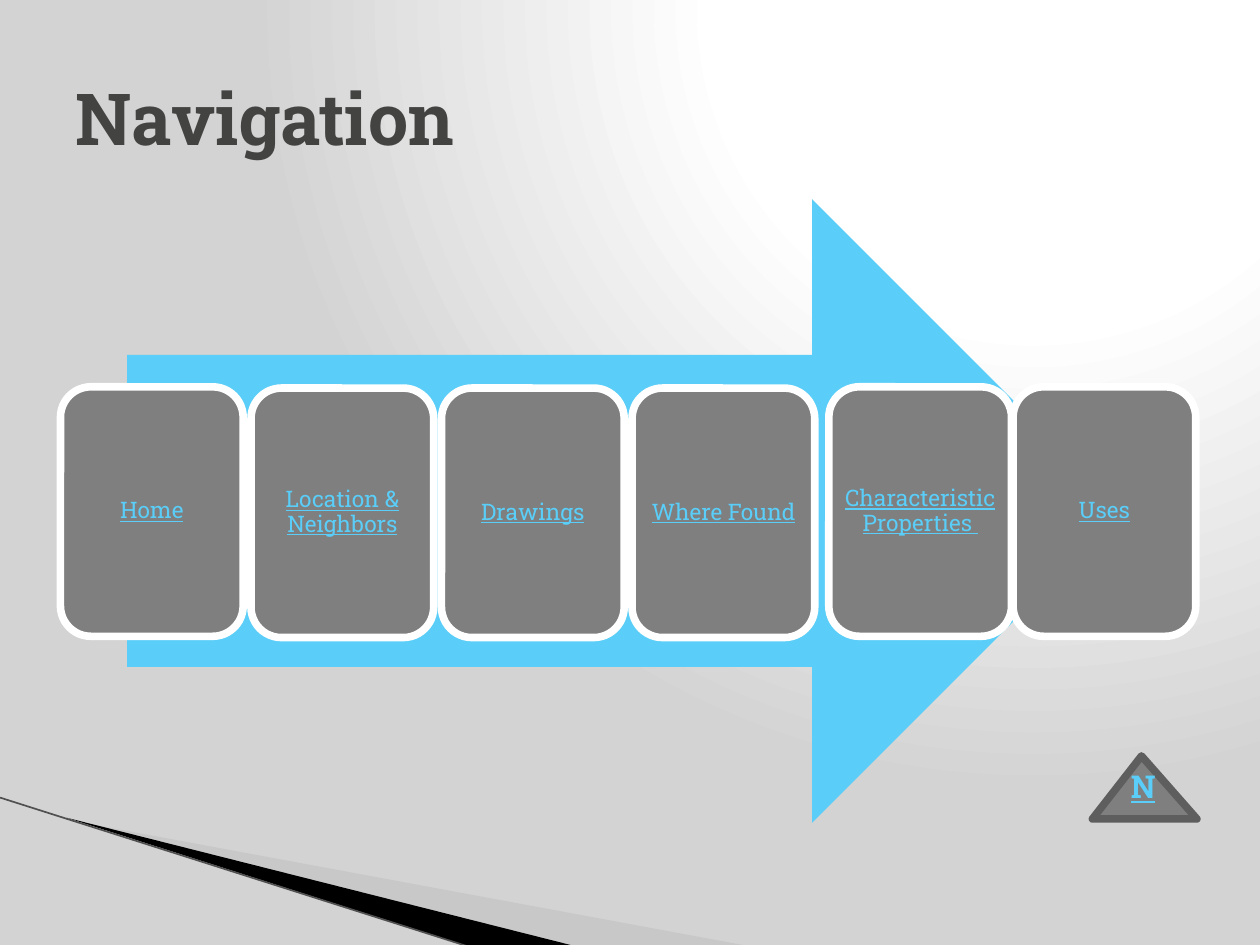
from dataclasses import dataclass

from lxml import etree
from pptx import Presentation
from pptx.dml.color import RGBColor
from pptx.enum.shapes import MSO_CONNECTOR, MSO_SHAPE
from pptx.enum.text import MSO_ANCHOR, PP_ALIGN
from pptx.oxml import parse_xml
from pptx.oxml.ns import qn
from pptx.util import Inches, Pt

ARROW = MSO_SHAPE.RIGHT_ARROW
CARD = MSO_SHAPE.ROUNDED_RECTANGLE
TRIANGLE = MSO_SHAPE.ISOSCELES_TRIANGLE
STRAIGHT = MSO_CONNECTOR.STRAIGHT
MIDDLE = MSO_ANCHOR.MIDDLE
LEFT, CENTER = PP_ALIGN.LEFT, PP_ALIGN.CENTER

COLUMNS, ROWS = 100, 75
CELL = Inches(0.1)


@dataclass(frozen=True)
class Theme:
    font: str = "Roboto Slab"
    title: str = "434342"
    accent: str = "5ACEF8"
    card: str = "7F7F7F"
    edge: str = "5E5E5E"
    light: str = "FFFFFF"
    backdrop: str = "D3D3D3"
    sweep: str = "B9B9B9"
    blade: str = "000000"
    hairline: str = "505050"
    title_size: float = 41
    card_size: float = 13
    button_size: float = 18
    border: float = 4.33
    thin: float = 0.95


THEME = Theme()


@dataclass(frozen=True)
class Box:
    left: float
    top: float
    width: float
    height: float

    def inside(self, left, top, width, height):
        return Box(self.left + left, self.top + top, width, height)

    def lengths(self):
        return [round(v * CELL) for v in (self.left, self.top, self.width, self.height)]


def paint(shape, fill, line=None):
    shape.shadow.inherit = False
    shape.fill.solid()
    shape.fill.fore_color.rgb = RGBColor.from_string(fill)
    if line:
        shape.line.color.rgb = RGBColor.from_string(line)
        shape.line.width = Pt(THEME.border)
    else:
        shape.line.fill.background()


def write(shape, text, *, size, color, bold=False, underline=False,
          align=CENTER, spacing=1.0, insets=(0.1, 0.05, 0.1, 0.05)):
    frame = shape.text_frame
    frame.word_wrap = True
    frame.vertical_anchor = MIDDLE
    frame.margin_left, frame.margin_top, frame.margin_right, frame.margin_bottom = map(Inches, insets)
    paragraph = frame.paragraphs[0]
    paragraph.alignment = align
    paragraph.line_spacing = spacing
    run = paragraph.add_run()
    run.text = text
    run.font.name = THEME.font
    run.font.size = Pt(size)
    run.font.bold = bold
    run.font.underline = underline
    run.font.color.rgb = RGBColor.from_string(color)


def add_background(slide):
    slide._element.cSld.insert(0, parse_xml(
        '<p:bg xmlns:p="http://schemas.openxmlformats.org/presentationml/2006/main"'
        ' xmlns:a="http://schemas.openxmlformats.org/drawingml/2006/main">'
        '<p:bgPr><a:gradFill rotWithShape="1"><a:gsLst>'
        f'<a:gs pos="0"><a:srgbClr val="{THEME.light}"/></a:gs>'
        f'<a:gs pos="40000"><a:srgbClr val="{THEME.light}"/></a:gs>'
        f'<a:gs pos="100000"><a:srgbClr val="{THEME.backdrop}"/></a:gs>'
        '</a:gsLst><a:path path="circle">'
        '<a:fillToRect l="65000" t="0" r="0" b="98000"/></a:path></a:gradFill>'
        '<a:effectLst/></p:bgPr></p:bg>'))


def add_sweep(slide, box):
    def outline(points, fill):
        start, *others = [((box.left + x) * CELL, (box.top + y) * CELL) for x, y in points]
        builder = slide.shapes.build_freeform(*start, scale=1.0)
        builder.add_line_segments(others, close=True)
        shape = builder.convert_to_shape()
        paint(shape, fill)
        return shape

    shade = outline([(5.5, 1.8), (59.5, 11.8), (45.6, 11.8)], THEME.sweep)
    color = shade._element.spPr.find(qn("a:solidFill"))[0]
    etree.SubElement(color, qn("a:alpha")).set("val", "40000")
    outline([(5.3, 1.6), (45.7, 11.8), (37.2, 11.8)], THEME.blade)

    left, top, width, height = box.lengths()
    hairline = slide.shapes.add_connector(
        STRAIGHT, left, top, left + round(37.1 * CELL), top + height)
    hairline.line.color.rgb = RGBColor.from_string(THEME.hairline)
    hairline.line.width = Pt(THEME.thin)
    etree.SubElement(hairline._element.spPr, qn("a:effectLst"))


def add_button(slide, box, label):
    button = slide.shapes.add_shape(TRIANGLE, *box.lengths())
    button.adjustments[0] = 0.47
    paint(button, THEME.card, THEME.edge)
    etree.SubElement(button.line._get_or_add_ln(), qn("a:round"))
    write(button, label, size=THEME.button_size, color=THEME.accent,
          bold=True, underline=True, insets=(0, 0, 0, 0.27))


def add_card_row(slide, box, cards):
    arrow = slide.shapes.add_shape(ARROW, *box.inside(5.3, 0, 79.1, box.height).lengths())
    paint(arrow, THEME.accent)
    width, height = 14.5, 19.8
    pitch = (box.width - width) / (len(cards) - 1)
    for column, (label, right, down) in enumerate(cards):
        place = box.inside(column * pitch + right, 14.9 + down, width, height)
        card = slide.shapes.add_shape(CARD, *place.lengths())
        paint(card, THEME.card, THEME.light)
        write(card, label, size=THEME.card_size, color=THEME.accent,
              underline=True, spacing=0.9, insets=(0.05,) * 4)


def add_title(slide, box, text):
    title = slide.shapes.add_textbox(*box.lengths())
    write(title, text, size=THEME.title_size, color=THEME.title, bold=True, align=LEFT)


def main():
    deck = Presentation()
    deck.slide_width, deck.slide_height = COLUMNS * CELL, ROWS * CELL
    slide = deck.slides.add_slide(deck.slide_layouts[6])
    add_background(slide)
    add_sweep(slide, Box(0, 63.3, 59.5, 11.8))
    add_button(slide, Box(86.7, 60, 8.3, 5), "N")
    add_card_row(slide, Box(4.8, 15.8, 90.1, 49.5), [
        ("Home", 0, 0),
        ("Location & Neighbors", 0, 0.1),
        ("Drawings", 0, 0.1),
        ("Where Found", 0, 0.1),
        ("Characteristic Properties ", 0.5, 0),
        ("Uses", 0, 0),
    ])
    add_title(slide, Box(5, 3, 90, 12.5), "Navigation")
    deck.save("out.pptx")


if __name__ == "__main__":
    main()
